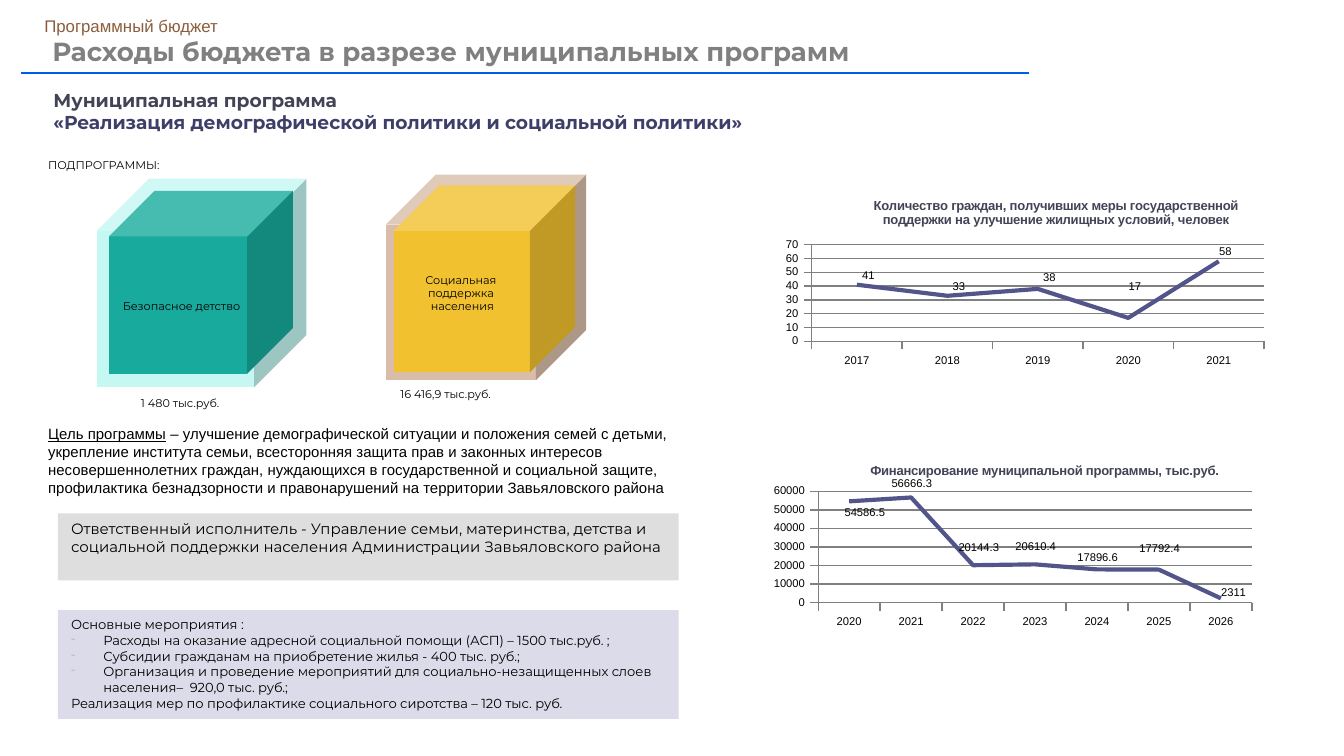
from lxml import etree
from pptx import Presentation
from pptx.chart.data import CategoryChartData
from pptx.dml.color import RGBColor
from pptx.enum.chart import XL_CHART_TYPE, XL_LABEL_POSITION, XL_TICK_MARK
from pptx.enum.shapes import MSO_SHAPE
from pptx.enum.text import MSO_ANCHOR, PP_ALIGN
from pptx.oxml import parse_xml
from pptx.oxml.ns import nsdecls, qn
from pptx.util import Inches, Pt

RECTANGLE, CUBE = MSO_SHAPE.RECTANGLE, MSO_SHAPE.CUBE
LEFT, CENTER = PP_ALIGN.LEFT, PP_ALIGN.CENTER
TOP, MIDDLE = MSO_ANCHOR.TOP, MSO_ANCHOR.MIDDLE
LABEL_RIGHT = XL_LABEL_POSITION.RIGHT

THEME = {
    "heading_font": "Montserrat", "body_font": "Arial",
    "title": 14, "program": 10, "section": 9, "body": 8, "small": 7, "label": 6,
    "black": "000000", "white": "FFFFFF", "gray": "808080", "brown": "8B5D3D",
    "blue": "005EE4", "dark": "424456", "violet": "3E3F68", "line": "53548A",
    "executor": "DEDEDE", "measures": "DBDBE9", "bullet": "BFBFBF",
}


def write_text(shape, lines, size, color="black", font="heading_font", bold=False,
               align=LEFT, anchor=TOP, margins=(0.1, 0.05), wrap=True):
    """Fill a shape with paragraphs in one style."""
    frame = shape.text_frame
    frame.word_wrap = wrap
    frame.vertical_anchor = anchor
    frame.margin_left = frame.margin_right = Inches(margins[0])
    frame.margin_top = frame.margin_bottom = Inches(margins[1])
    frame.text = "\n".join(lines)
    for paragraph in frame.paragraphs:
        paragraph.alignment = align
        for run in paragraph.runs:
            run.font.size = Pt(THEME[size])
            run.font.name = THEME[font]
            run.font.bold = bold
            run.font.color.rgb = RGBColor.from_string(THEME[color])
    return frame.paragraphs


def add_filled(kind, box, fill):
    """Add a preset shape without outline or shadow."""
    shape = slide.shapes.add_shape(kind, *map(Inches, box))
    shape.shadow.inherit = False
    shape.fill.solid()
    shape.fill.fore_color.rgb = RGBColor.from_string(fill)
    shape.line.fill.background()
    return shape


presentation = Presentation()
presentation.slide_width = Inches(10)
presentation.slide_height = Inches(10) * 9 // 16
slide = presentation.slides.add_slide(presentation.slide_layouts[6])

# Header
tight = (0.07, 0.04)
title = slide.shapes.add_textbox(Inches(0.32), Inches(0.21), Inches(9), Inches(0.37))
paragraphs = write_text(title, ["Расходы бюджета в разрезе муниципальных программ"], "title",
                        "gray", bold=True, anchor=MIDDLE, margins=tight)
paragraphs[0].line_spacing = 0.9
section = slide.shapes.add_textbox(Inches(0.26), Inches(0.08), Inches(1.96), Inches(0.23))
write_text(section, ["Программный бюджет"], "section", "brown", "body_font", margins=tight)
rule = add_filled(RECTANGLE, (0.15, 0.53, 7.51, 0.03), THEME["blue"])
rule.line.color.rgb = RGBColor.from_string(THEME["white"])
rule.line.width = Pt(0.75)

program = slide.shapes.add_textbox(Inches(0.3), Inches(0.61), Inches(9.56), Inches(0.44))
paragraphs = write_text(program, [
    "Муниципальная программа",
    "«Реализация демографической политики и социальной политики»",
], "program", "dark", bold=True)
paragraphs[1].runs[0].font.color.rgb = RGBColor.from_string(THEME["violet"])

# Subprogram cubes: a pale one behind a bright one
cubes = [
    ((0.72, 1.33, 1.56, 1.55), "C5F8F3"),
    ((0.81, 1.42, 1.37, 1.36), "18AA9D"),
    ((2.87, 1.3, 1.49, 1.53), "D9BDA9"),
    ((2.93, 1.38, 1.35, 1.39), "F2C130"),
]
for box, fill in cubes:
    add_filled(CUBE, box, fill)

captions = [
    ((0.8, 2.19, 1.1, 0.25), ["Безопасное детство"], CENTER, tight, True),
    ((2.9, 1.99, 1.08, 0.82), ["Социальная ", "поддержка  населения"], CENTER, tight, True),
    ((0.95, 2.9, 0.79, 0.2), ["1 480 тыс.руб."], LEFT, (0.1, 0.05), False),
    ((2.88, 2.83, 1.11, 0.2), ["16 416,9 тыс.руб."], LEFT, (0.1, 0.05), True),
    ((0.26, 1.13, 1.04, 0.2), ["ПОДПРОГРАММЫ:"], LEFT, (0.1, 0.05), False),
]
for box, lines, align, margins, wrap in captions:
    caption = slide.shapes.add_textbox(*map(Inches, box))
    write_text(caption, lines, "label", align=align, margins=margins, wrap=wrap)

# Goal of the program
goal = slide.shapes.add_textbox(Inches(0.26), Inches(3.11), Inches(5.11), Inches(0.64))
paragraph = write_text(goal, ["Цель программы"], "body", font="body_font")[0]
paragraph.runs[0].font.underline = True
run = paragraph.add_run()
run.text = (" – улучшение демографической ситуации и положения семей с детьми, "
            "укрепление института семьи, всесторонняя защита прав и законных интересов "
            "несовершеннолетних граждан, нуждающихся в государственной и социальной защите, "
            "профилактика безнадзорности и правонарушений на территории Завьяловского района")
run.font.size = Pt(THEME["body"])
run.font.name = THEME["body_font"]
run.font.color.rgb = RGBColor.from_string(THEME["black"])

# Executor and measures
executor = add_filled(RECTANGLE, (0.43, 3.82, 4.62, 0.5), THEME["executor"])
write_text(executor, ["Ответственный исполнитель - Управление семьи, материнства, детства и "
                      "социальной поддержки населения Администрации Завьяловского района"], "body")
measures = add_filled(RECTANGLE, (0.43, 4.54, 4.62, 0.81), THEME["measures"])
paragraphs = write_text(measures, [
    "Основные мероприятия :",
    "Расходы на оказание адресной социальной помощи (АСП) – 1500 тыс.руб. ;",
    "Субсидии гражданам на приобретение жилья - 400 тыс. руб.;",
    "Организация и проведение мероприятий для социально-незащищенных слоев "
    "населения–  920,0 тыс. руб.;",
    "Реализация мер по профилактике социального сиротства – 120 тыс. руб.",
], "small")
for paragraph in paragraphs[1:4]:
    properties = paragraph._p.get_or_add_pPr()
    properties.set("marL", str(Inches(0.24)))
    properties.set("indent", str(-Inches(0.24)))
    bullet_color = etree.SubElement(properties, qn("a:buClr"))
    etree.SubElement(bullet_color, qn("a:srgbClr"), val=THEME["bullet"])
    etree.SubElement(properties, qn("a:buChar"), char="-")

# Line charts: box, title, title place, plot area, first year, axis, values, label shifts
charts = [
    ((5.78, 1.4, 3.7, 1.36),
     "Количество граждан, получивших меры государственной поддержки "
     "на улучшение жилищных условий, человек",
     (0.19, 0.04), (0.07, 0.31, 0.91, 0.53), 2017, (70, 10), [41, 33, 38, 17, 58],
     [(0, -0.05), (0, -0.05), (0, -0.06), (-0.01, -0.17), (-0.01, -0.05)]),
    ((5.68, 3.27, 3.71, 1.43), "Финансирование муниципальной программы, тыс.руб.",
     (0.21, 0.11), (0.11, 0.27, 0.87, 0.58), 2020, (60000, 10000),
     [54586.5, 56666.3, 20144.3, 20610.4, 17896.6, 17792.4, 2311],
     [(-0.02, 0.06), (-0.05, -0.07), (-0.04, -0.09), (-0.05, -0.09),
      (-0.05, -0.06), (-0.05, -0.11), (-0.01, -0.03)]),
]
LAYOUT = "<c:layout %s><c:manualLayout>%s</c:manualLayout></c:layout>"
PLACE = '<c:x val="%s"/><c:y val="%s"/>'
EDGE = '<c:xMode val="edge"/><c:yMode val="edge"/>'
NO_LEADER_LINES = (
    '<c:extLst %s><c:ext uri="{CE6537A1-D6FC-4f65-9D91-7224C49458BB}" '
    'xmlns:c15="http://schemas.microsoft.com/office/drawing/2012/chart">'
    '<c15:showLeaderLines val="0"/></c:ext></c:extLst>' % nsdecls("c"))
for box, heading, title_place, plot_area, first_year, scale, values, shifts in charts:
    chart_data = CategoryChartData()
    chart_data.categories = [str(first_year + index) for index in range(len(values))]
    chart_data.add_series("Series 1", values)
    chart = slide.shapes.add_chart(XL_CHART_TYPE.LINE, *map(Inches, box), chart_data).chart
    chart.has_legend = False
    chart.font.name = THEME["body_font"]
    chart.font.size = Pt(THEME["label"])
    chart.font.color.rgb = RGBColor.from_string(THEME["black"])

    chart.chart_title.text_frame.text = heading
    font = chart.chart_title.text_frame.paragraphs[0].runs[0].font
    font.size, font.bold, font.name = Pt(THEME["small"]), True, THEME["body_font"]
    font.color.rgb = RGBColor.from_string(THEME["dark"])
    chart.chart_title.include_in_layout = False

    value_axis, category_axis = chart.value_axis, chart.category_axis
    value_axis.minimum_scale = 0
    value_axis.maximum_scale, value_axis.major_unit = scale
    value_axis.has_major_gridlines = True
    for axis in (value_axis, category_axis):
        axis.major_tick_mark = XL_TICK_MARK.OUTSIDE
        axis.tick_labels.font.size = Pt(THEME["label"])
    for line in (value_axis.major_gridlines.format.line, value_axis.format.line,
                 category_axis.format.line):
        line.color.rgb = RGBColor.from_string(THEME["gray"])
        line.width = Pt(0.75)

    plot = chart.plots[0]
    plot.vary_by_categories = False
    series = plot.series[0]
    series.smooth = False
    series.format.line.color.rgb = RGBColor.from_string(THEME["line"])
    series.format.line.width = Pt(2.25)
    series.data_labels.show_value = True
    series.data_labels.font.size = Pt(THEME["label"])
    for index in range(len(values)):
        label = series.points[index].data_label
        label.font.size = Pt(THEME["label"])
        label.position = LABEL_RIGHT

    # Manual places for the title, plot area and value labels, without leader lines
    for label, shift in zip(series._element.iter(qn("c:dLbl")), shifts):
        label.insert(1, parse_xml(LAYOUT % (nsdecls("c"), PLACE % shift)))
    labels = series._element.find(qn("c:dLbls"))
    for leader_lines in labels.findall(qn("c:showLeaderLines")):
        leader_lines.set("val", "0")
    labels.append(parse_xml(NO_LEADER_LINES))
    chart_element = chart._chartSpace.chart
    for tag, content in (
        ("c:title", EDGE + PLACE % title_place),
        ("c:plotArea", '<c:layoutTarget val="inner"/>' + EDGE + PLACE % plot_area[:2]
         + '<c:w val="%s"/><c:h val="%s"/>' % plot_area[2:]),
    ):
        element = chart_element.find(qn(tag))
        for old_layout in element.findall(qn("c:layout")):
            element.remove(old_layout)
        element.insert(1 if tag == "c:title" else 0,
                       parse_xml(LAYOUT % (nsdecls("c"), content)))

presentation.save("out.pptx")
